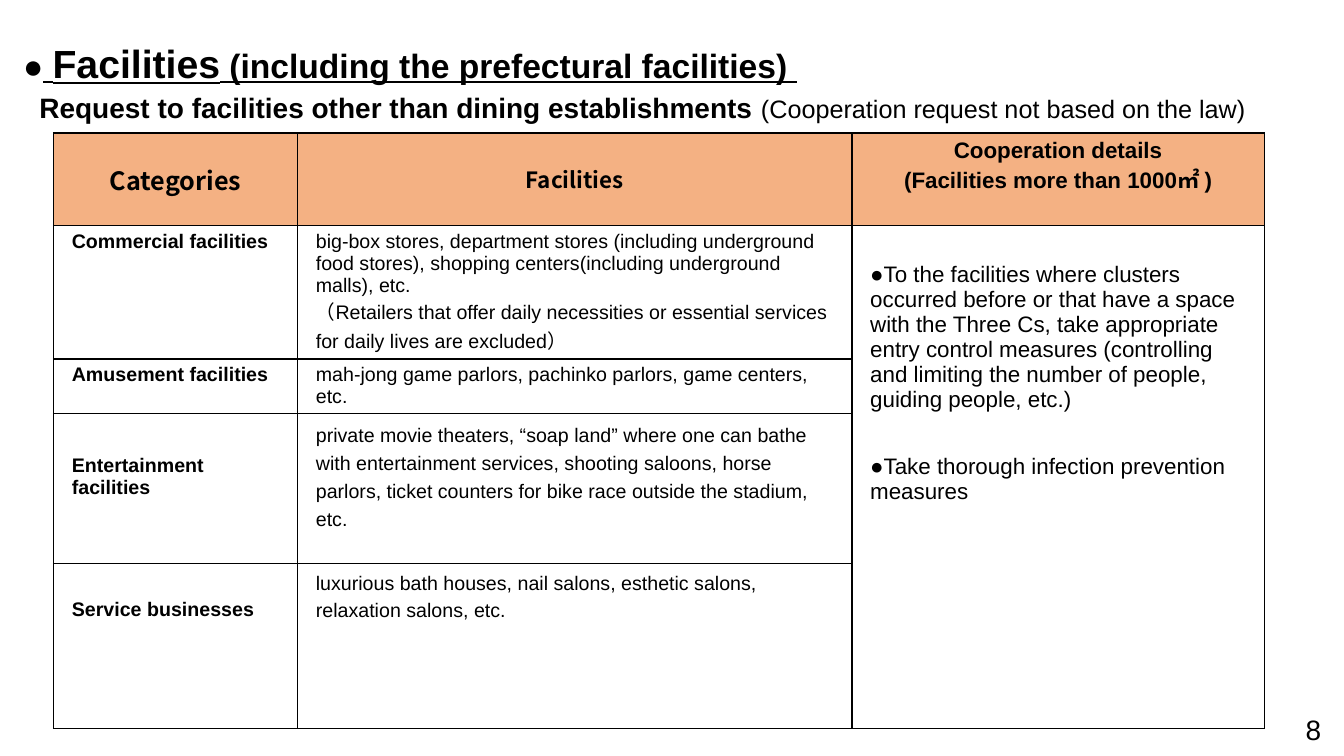
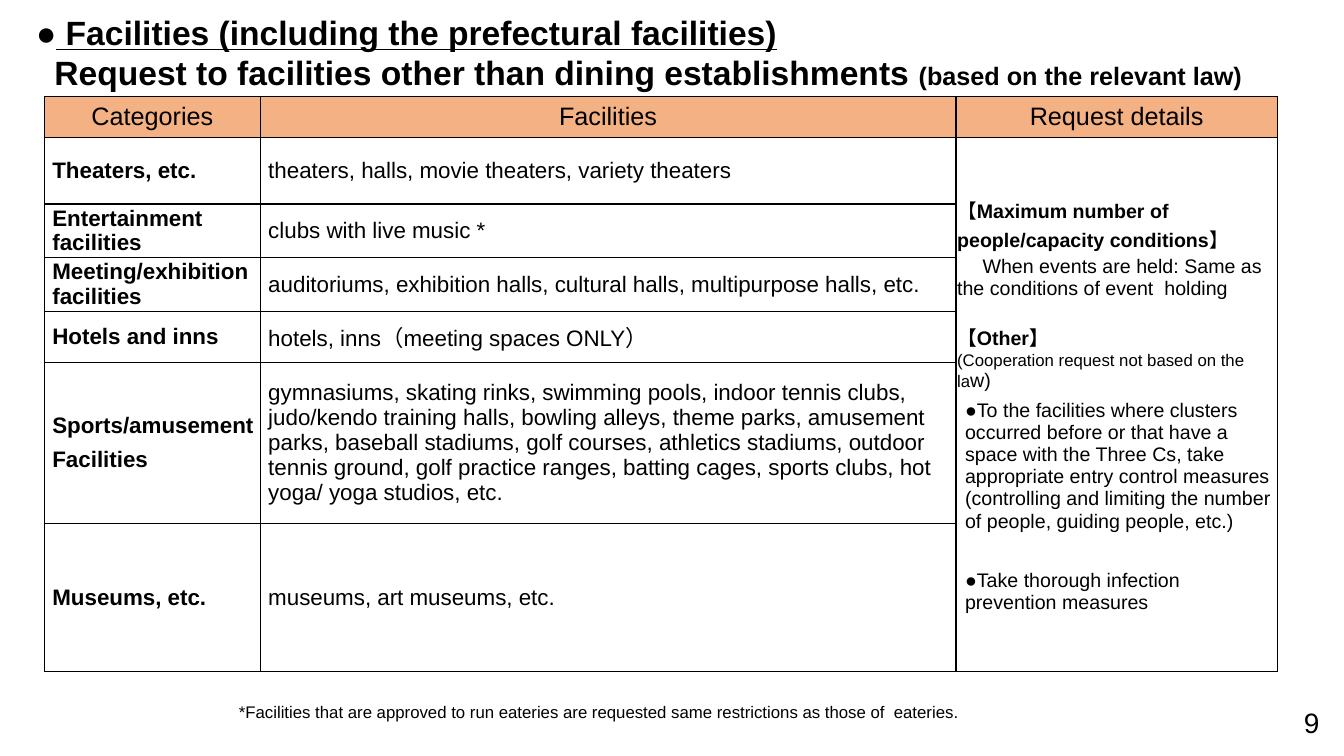
"""Builds two slides on requests to facilities, each with a heading, a table and a page number."""
from dataclasses import dataclass

from lxml.etree import SubElement
from pptx import Presentation
from pptx.dml.color import RGBColor
from pptx.enum.text import MSO_ANCHOR as Anchor, MSO_AUTO_SIZE as AutoSize, PP_ALIGN as Align
from pptx.oxml.ns import qn
from pptx.util import Cm, Pt

BLACK, ORANGE = "000000", "F4B183"
SANS, CJK = "Arial", "Noto Sans CJK JP"
INSET = (0.25, 0.13, 0.25, 0.13)


@dataclass
class Span:
    """A run of text in one format."""
    text: str
    size: int
    bold: bool = False
    underline: bool = False
    font: str = SANS


@dataclass
class Para:
    """A paragraph; sizes in points, indents in centimetres."""
    spans: list
    align: Align = Align.LEFT
    before: float = 0
    line: float = 0
    left: float = 0
    first: float = 0


@dataclass
class Entry:
    """The content of a table cell."""
    paras: list
    anchor: Anchor = Anchor.MIDDLE
    margins: tuple = INSET
    fill: str = ""


def plain(text, size, bold=False, **options):
    return Para([Span(text, size, bold)], **options)


def header(*spans, anchor=Anchor.MIDDLE):
    return Entry([Para([span], Align.CENTER) for span in spans], anchor, fill=ORANGE)


def upper(*paras, top=0.13):
    return Entry(list(paras), Anchor.TOP, (0.46, top, 0.25, 0.13))


def tight(*texts, bold=False):
    return Entry([plain(text, 16, bold, before=6) for text in texts], margins=(0.2, 0, 0, 0))


CLUSTERS = ("●To the facilities where clusters occurred before or that have a space with the Three Cs, "
            "take appropriate entry control measures (controlling and limiting the number of people, "
            "guiding people, etc.)")
PREVENTION = "●Take thorough infection prevention measures"
REQUEST = "Request to facilities other than dining establishments "

COOPERATION = upper(plain(CLUSTERS, 16), plain(PREVENTION, 16, before=30), top=0.94)
CONDITIONS = Entry([
    Para([Span("【", 14), Span("Maximum number of people/capacity conditions", 14, True), Span("】", 14)]),
    plain("When events are held: Same as the conditions of event  holding", 14, before=2, first=0.64),
    plain("【Other】", 14, True, before=16),
    Para([Span("(Cooperation request not based on the la", 12), Span("w)", 14)]),
    plain(CLUSTERS, 14, before=6, left=0.2),
    plain(PREVENTION, 14, before=27, left=0.2),
], margins=(0.03, 0.03, 0.03, 0))

SLIDES = [
    {
        "title": [Span("●", 24, True), Span(" ", 24, True, True), Span("Facilities", 28, True, True),
                  Span(" (including the prefectural facilities) ", 24, True, True)],
        "title_at": (0.33, 0.86, 24.9, 1.45),
        "subtitle": [Span(REQUEST, 20, True), Span("(Cooperation request not based on the law)", 18)],
        "subtitle_at": (0.74, 2.16, 32.8, 1.12),
        "table_at": (1.35, 3.35),
        "columns": [6.15, 13.97, 10.39],
        "rows": [2.33, 3.35, 1.37, 3.78, 4.17],
        "headers": [header(Span("Categories", 18, True, font=CJK)),
                    header(Span("Facilities", 16, True, font=CJK)),
                    header(Span("Cooperation details", 16, True),
                           Span("(Facilities more than 1000㎡ )", 16, True), anchor=Anchor.TOP)],
        "entries": [
            (upper(plain("Commercial facilities", 14, True)),
             upper(plain("big-box stores, department stores (including underground food stores), "
                         "shopping centers(including underground malls), etc.", 14),
                   plain("（Retailers that offer daily necessities or essential services "
                         "for daily lives are excluded）", 14))),
            (upper(plain("Amusement facilities", 14, True)),
             upper(plain("mah-jong game parlors, pachinko parlors, game centers, etc.", 14))),
            (upper(plain("Entertainment facilities", 14, True), top=1.04),
             upper(plain("private movie theaters, “soap land” where one can bathe with entertainment "
                         "services, shooting saloons, horse parlors, ticket counters for bike race "
                         "outside the stadium, etc.", 14, line=20))),
            (upper(plain("Service businesses", 14, True), top=0.9),
             upper(plain("luxurious bath houses, nail salons, esthetic salons, relaxation salons, etc.",
                         14, line=19))),
        ],
        "details": COOPERATION,
        "number": "8",
        "number_at": (25.93, 17.88, 7.62, 1.02),
    },
    {
        "title": [Span("●", 24, True),
                  Span(" Facilities (including the prefectural facilities)", 24, True, True)],
        "title_at": (0.66, 0.18, 25, 1.27),
        "subtitle": [Span(REQUEST, 24, True), Span("(based on the relevant law)", 18, True)],
        "subtitle_at": (1.12, 1.17, 31.3, 1.27),
        "table_at": (1.12, 2.44),
        "columns": [5.44, 17.53, 8.1],
        "rows": [1.02, 1.68, 1.35, 1.36, 1.28, 4.06, 3.73],
        "headers": [header(Span(text, 18)) for text in ("Categories", "Facilities", "Request details")],
        "entries": [(tight(*names, bold=True), tight(text)) for names, text in [
            (["Theaters, etc."], "theaters, halls, movie theaters, variety theaters"),
            (["Entertainment facilities"], "clubs with live music *"),
            (["Meeting/exhibition facilities"],
             "auditoriums, exhibition halls, cultural halls, multipurpose halls, etc."),
            (["Hotels and inns"], "hotels, inns（meeting spaces ONLY）"),
            (["Sports/amusement", "Facilities"],
             "gymnasiums, skating rinks, swimming pools, indoor tennis clubs, judo/kendo training halls, "
             "bowling alleys, theme parks, amusement parks, baseball stadiums, golf courses, athletics "
             "stadiums, outdoor tennis ground, golf practice ranges, batting cages, sports clubs, "
             "hot yoga/ yoga studios, etc."),
            (["Museums, etc."], "museums, art museums, etc."),
        ]],
        "details": CONDITIONS,
        "number": "9",
        "number_at": (29.87, 17.68, 3.63, 1.02),
        "footnote": "*Facilities that are approved to run eateries are requested same restrictions "
                    "as those of  eateries.",
        "footnote_at": (5.77, 17.45, 27, 1),
    },
]


def color(value):
    return RGBColor.from_string(value)


def write(frame, paras):
    for index, item in enumerate(paras):
        para = frame.paragraphs[0] if index == 0 else frame.add_paragraph()
        para.alignment = item.align
        para.space_before = Pt(item.before)
        if item.line:
            para.line_spacing = Pt(item.line)
        props = para._p.get_or_add_pPr()
        props.set("marL", str(Cm(item.left)))
        props.set("indent", str(Cm(item.first)))
        SubElement(props, qn("a:buNone"))
        for part in item.spans:
            span = para.add_run()
            span.text = part.text
            font = span.font
            font.name, font.size, font.bold = part.font, Pt(part.size), part.bold
            font.underline = part.underline
            font.color.rgb = color(BLACK)
            SubElement(span._r.get_or_add_rPr(), qn("a:ea"), typeface=CJK)


def set_margins(target, margins):
    target.margin_left, target.margin_top, target.margin_right, target.margin_bottom = map(Cm, margins)


def fill_box(box, place, paras, anchor=Anchor.TOP):
    box.left, box.top, box.width, box.height = map(Cm, place)
    frame = box.text_frame
    frame.word_wrap = True
    frame.auto_size = AutoSize.NONE
    frame.vertical_anchor = anchor
    set_margins(frame, INSET)
    write(frame, paras)


def add_text(page, place, paras, anchor=Anchor.TOP):
    fill_box(page.shapes.add_textbox(*map(Cm, place)), place, paras, anchor)


def add_borders(cell):
    props = cell._tc.get_or_add_tcPr()
    for side in ("a:lnL", "a:lnR", "a:lnT", "a:lnB"):
        line = SubElement(props, qn(side), w=str(Pt(1)))
        SubElement(SubElement(line, qn("a:solidFill")), qn("a:srgbClr"), val=BLACK)


def fill_cell(cell, entry):
    if entry.fill:
        cell.fill.solid()
        cell.fill.fore_color.rgb = color(entry.fill)
    cell.vertical_anchor = entry.anchor
    set_margins(cell, entry.margins)
    write(cell.text_frame, entry.paras)


def add_facility_table(page, content):
    columns, rows = content["columns"], content["rows"]
    size = Cm(sum(columns)), Cm(sum(rows))
    table = page.shapes.add_table(len(rows), len(columns), *map(Cm, content["table_at"]), *size).table
    table.first_row = table.horz_banding = False
    for column, width in zip(table.columns, columns):
        column.width = Cm(width)
    for row, height in zip(table.rows, rows):
        row.height = Cm(height)
    for cell in table.iter_cells():
        add_borders(cell)
        cell.fill.background()
    table.cell(1, 2).merge(table.cell(len(rows) - 1, 2))
    for row, entries in enumerate([content["headers"], *content["entries"]]):
        for column, entry in enumerate(entries):
            fill_cell(table.cell(row, column), entry)
    fill_cell(table.cell(1, 2), content["details"])


def add_page(deck, content):
    page = deck.slides.add_slide(deck.slide_layouts[1])
    fill_box(page.shapes.title, content["title_at"], [Para(content["title"])])
    fill_box(page.placeholders[1], content["subtitle_at"], [Para(content["subtitle"])])
    add_facility_table(page, content)
    add_text(page, content["number_at"], [plain(content["number"], 20, align=Align.RIGHT)], Anchor.MIDDLE)
    if "footnote" in content:
        add_text(page, content["footnote_at"], [plain(content["footnote"], 12, line=17)])


def main():
    deck = Presentation()
    deck.slide_width, deck.slide_height = Cm(33.87), Cm(19.05)
    for content in SLIDES:
        add_page(deck, content)
    deck.save("out.pptx")


if __name__ == "__main__":
    main()
